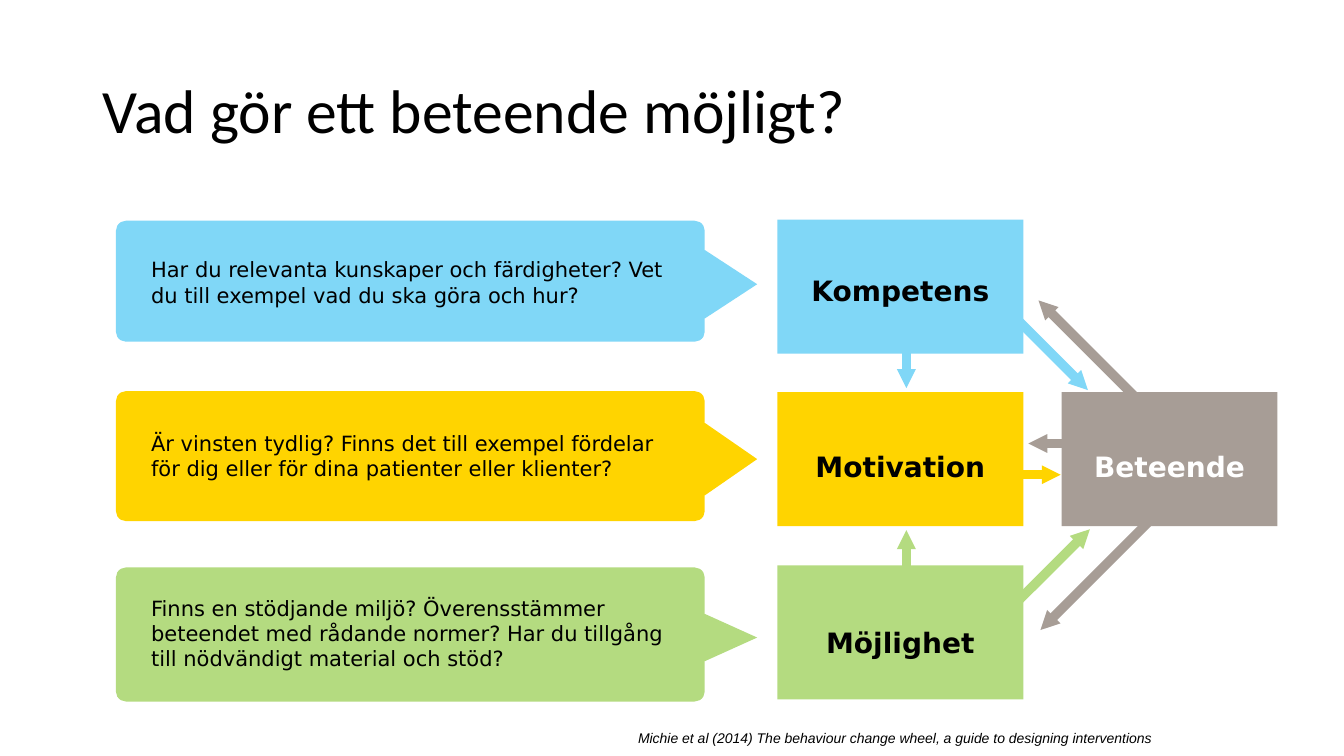
from lxml import etree
from pptx import Presentation
from pptx.dml.color import RGBColor
from pptx.enum.shapes import MSO_CONNECTOR, MSO_SHAPE
from pptx.enum.text import MSO_ANCHOR, PP_ALIGN
from pptx.oxml.ns import qn
from pptx.util import Inches, Pt

BLUE = RGBColor(0x80, 0xD7, 0xF7)
YELLOW = RGBColor(0xFF, 0xD4, 0x00)
GREEN = RGBColor(0xB4, 0xDB, 0x80)
GREY = RGBColor(0xA7, 0x9D, 0x96)
BLACK = RGBColor(0x00, 0x00, 0x00)
WHITE = RGBColor(0xFF, 0xFF, 0xFF)

TITLE = "Vad gör ett beteende möjligt?"
SOURCE = "Michie et al (2014) The behaviour change wheel, a guide to designing interventions"

# question, colour, top, height, text top, pointer height
QUESTIONS = [
    ("Har du relevanta kunskaper och färdigheter? Vet du till exempel vad du ska göra och hur?",
     BLUE, 2.19, 1.2, 2.55, 0.68),
    ("Är vinsten tydlig? Finns det till exempel fördelar för dig eller för dina patienter eller klienter?",
     YELLOW, 3.88, 1.29, 4.27, 0.72),
    ("Finns en stödjande miljö? Överensstämmer beteendet med rådande normer? "
     "Har du tillgång till nödvändigt material och stöd?",
     GREEN, 5.63, 1.33, 5.91, 0.47),
]
# label, fill, font colour, left, top, width, text top
FACTORS = [
    ("Kompetens", BLUE, BLACK, 7.71, 2.18, 2.44, 2.71),
    ("Motivation", YELLOW, BLACK, 7.71, 3.89, 2.44, 4.46),
    ("Möjlighet", GREEN, BLACK, 7.71, 5.61, 2.44, 6.21),
    ("Beteende", GREY, WHITE, 10.53, 3.89, 2.14, 4.46),
]
# colour, start, tip
INFLUENCES = [
    (BLUE, (8.99, 3.41), (8.99, 3.85)),
    (BLUE, (10.03, 3.11), (10.79, 3.87)),
    (GREEN, (8.99, 5.66), (8.99, 5.26)),
    (GREEN, (9.97, 6.09), (10.81, 5.25)),
    (YELLOW, (10.02, 4.71), (10.52, 4.71)),
    (GREY, (10.64, 4.4), (10.2, 4.4)),
    (GREY, (11.32, 4.0), (10.3, 2.98)),
    (GREY, (11.58, 4.99), (10.32, 6.25)),
]

QUESTION_LEFT, QUESTION_WIDTH = 1.15, 5.84
POINTER_WIDTH = 1.04
CORNER = 0.1
CORNER_INSET = 0.03  # a rounded rectangle moves its text in by this much
FACTOR_HEIGHT = 1.33

QUESTION_FONT = {"name": "DejaVu Sans", "size": Pt(15)}
FACTOR_FONT = {"name": "DejaVu Sans", "size": Pt(20), "bold": True}
SOURCE_FONT = {"name": "Arial", "size": Pt(10), "italic": True}
TITLE_FONT = {"name": "Calibri", "size": Pt(44)}


def write(frame, text, font, color=BLACK, align=PP_ALIGN.LEFT, **frame_format):
    frame.word_wrap = True
    for key, value in frame_format.items():
        setattr(frame, key, value)
    paragraph = frame.paragraphs[0]
    paragraph.alignment = align
    run = paragraph.add_run()
    run.text = text
    for key, value in font.items():
        setattr(run.font, key, value)
    run.font.color.rgb = color
    return paragraph


def add_block(slide, preset, color, left, top, width, height):
    """Add a borderless, filled shape."""
    block = slide.shapes.add_shape(
        preset, Inches(left), Inches(top), Inches(width), Inches(height))
    block.shadow.inherit = False
    block.fill.solid()
    block.fill.fore_color.rgb = color
    block.line.fill.background()
    return block


def add_arrow(slide, color, start, tip):
    arrow = slide.shapes.add_connector(
        MSO_CONNECTOR.STRAIGHT, *(Inches(value) for value in start + tip))
    arrow.line.color.rgb = color
    arrow.line.width = Pt(6.75)
    etree.SubElement(arrow.line._get_or_add_ln(), qn("a:tailEnd"),
                     type="triangle", w="sm", len="sm")
    etree.SubElement(arrow._element.spPr, qn("a:effectLst"))


def add_question(slide, text, color, top, height, text_top, pointer_height):
    right = QUESTION_LEFT + QUESTION_WIDTH
    add_block(slide, MSO_SHAPE.DIAMOND, color, right - POINTER_WIDTH / 2,
              top + (height - pointer_height) / 2 + 0.03, POINTER_WIDTH, pointer_height)
    question = add_block(slide, MSO_SHAPE.ROUNDED_RECTANGLE, color,
                         QUESTION_LEFT, top, QUESTION_WIDTH, height)
    question.adjustments[0] = CORNER / height
    write(question.text_frame, text, QUESTION_FONT,
          vertical_anchor=MSO_ANCHOR.TOP, margin_bottom=0,
          margin_top=Inches(text_top - top - CORNER_INSET),
          margin_left=Inches(0.35 - CORNER_INSET),
          margin_right=Inches(0.18 - CORNER_INSET))


def add_factor(slide, label, fill, font_color, left, top, width, text_top):
    factor = add_block(slide, MSO_SHAPE.RECTANGLE, fill, left, top, width, FACTOR_HEIGHT)
    write(factor.text_frame, label, FACTOR_FONT, font_color, PP_ALIGN.CENTER,
          vertical_anchor=MSO_ANCHOR.TOP, margin_bottom=0,
          margin_top=Inches(text_top - top))


def main():
    presentation = Presentation()
    presentation.slide_width = Inches(13.33)
    presentation.slide_height = Inches(7.5)
    slide = presentation.slides.add_slide(presentation.slide_layouts[5])

    title = slide.shapes.title
    title.left, title.top = Inches(0.92), Inches(0.4)
    title.width, title.height = Inches(11.5), Inches(1.45)
    heading = write(title.text_frame, TITLE, TITLE_FONT,
                    vertical_anchor=MSO_ANCHOR.MIDDLE)
    heading.line_spacing = 0.9

    for influence in INFLUENCES:
        add_arrow(slide, *influence)
    for question in QUESTIONS:
        add_question(slide, *question)
    for factor in FACTORS:
        add_factor(slide, *factor)

    source = slide.shapes.add_textbox(
        Inches(6.23), Inches(7.19), Inches(5.43), Inches(0.27))
    write(source.text_frame, SOURCE, SOURCE_FONT)

    presentation.save("out.pptx")


if __name__ == "__main__":
    main()
